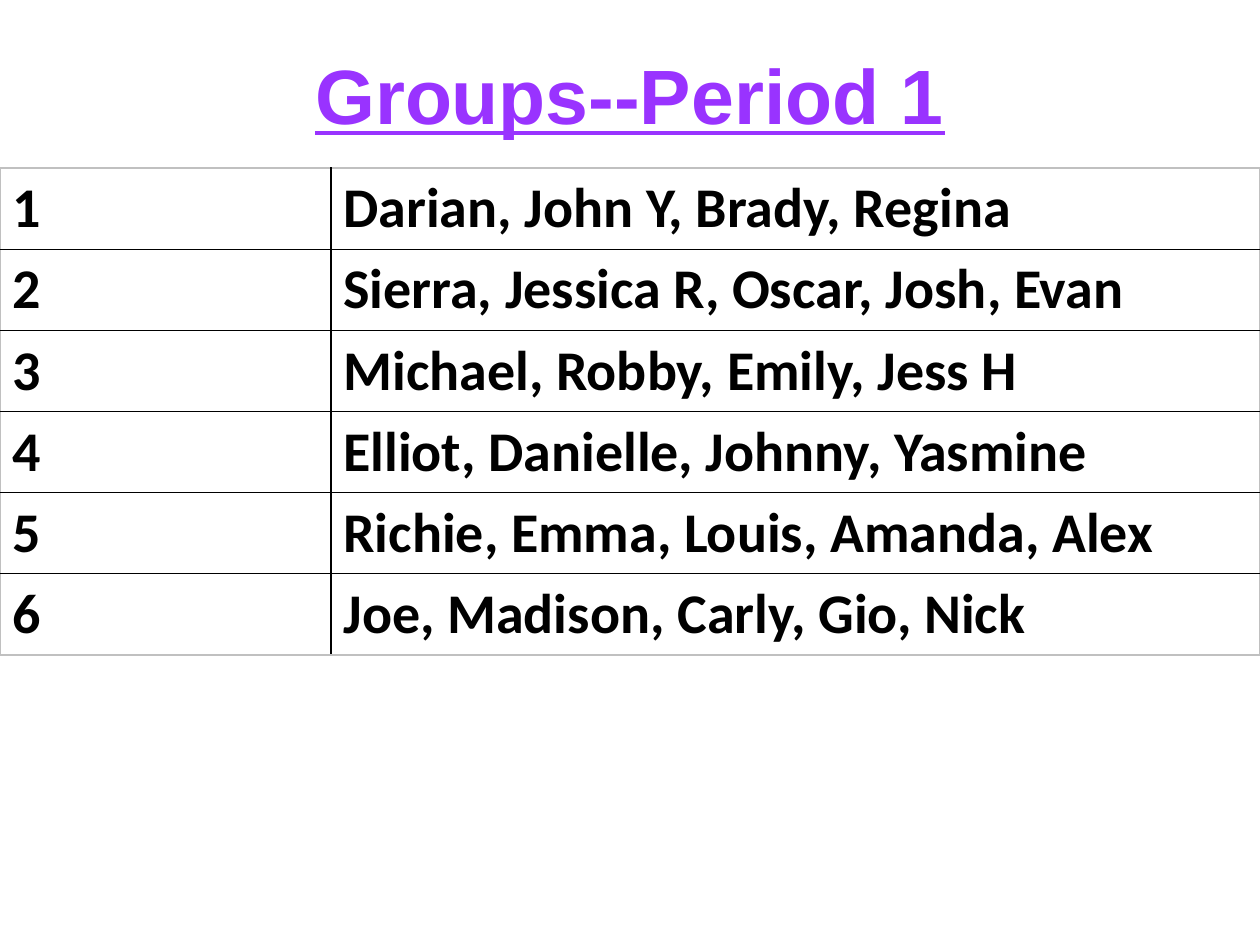
from dataclasses import dataclass

from lxml.etree import SubElement
from pptx import Presentation
from pptx.dml.color import RGBColor
from pptx.enum.text import MSO_ANCHOR, PP_ALIGN
from pptx.oxml.ns import qn
from pptx.util import Cm, Pt


@dataclass(frozen=True)
class Theme:
    title: str = "9933FF"
    text: str = "000000"
    inner: str = "000000"
    outer: str = "C0C0C0"
    head_size: int = 44
    cell_size: int = 32
    head_font: str = "Arial"
    cell_font: str = "Calibri"


THEME = Theme()
WIDTH = 25.4
COLS = (6.67, WIDTH - 6.67)
ROW = 1.61
GROUPS = (
    "Darian, John Y, Brady, Regina",
    "Sierra, Jessica R, Oscar, Josh, Evan",
    "Michael, Robby, Emily, Jess H",
    "Elliot, Danielle, Johnny, Yasmine",
    "Richie, Emma, Louis, Amanda, Alex",
    "Joe, Madison, Carly, Gio, Nick",
)


def add_run(para, text, font, size, color):
    run = para.add_run()
    run.text = text
    run.font.name = font
    run.font.size = Pt(size)
    run.font.bold = True
    run.font.color.rgb = RGBColor.from_string(color)
    return run


def add_title(slide, text):
    title = slide.shapes.title
    title.left, title.top = Cm(0), Cm(0.05)
    title.width, title.height = Cm(WIDTH), Cm(3.68)
    frame = title.text_frame
    frame.vertical_anchor = MSO_ANCHOR.MIDDLE
    para = frame.paragraphs[0]
    para.alignment = PP_ALIGN.CENTER
    run = add_run(para, text, THEME.head_font, THEME.head_size, THEME.title)
    run.font.underline = True


def set_lines(cell, edges):
    """Draw the four borders; edges tells which sides lie on the rim."""
    props = cell._tc.get_or_add_tcPr()
    for side, rim in zip("LRTB", edges):
        line = SubElement(props, qn(f"a:ln{side}"), w=str(Pt(1)))
        fill = SubElement(line, qn("a:solidFill"))
        color = THEME.outer if rim else THEME.inner
        SubElement(fill, qn("a:srgbClr"), val=color)


def add_groups(slide, groups):
    count = len(groups)
    frame = slide.shapes.add_table(
        count, len(COLS), Cm(0), Cm(3.39), Cm(WIDTH), Cm(ROW * count))
    table = frame.table
    table.first_row = table.horz_banding = False
    for col, width in zip(table.columns, COLS):
        col.width = Cm(width)
    for i, names in enumerate(groups):
        table.rows[i].height = Cm(ROW)
        for j, text in enumerate((str(i + 1), names)):
            cell = table.cell(i, j)
            add_run(cell.text_frame.paragraphs[0], text,
                    THEME.cell_font, THEME.cell_size, THEME.text)
            set_lines(cell, (j == 0, j == len(COLS) - 1,
                             i == 0, i == count - 1))
            cell.fill.background()


def main():
    deck = Presentation()
    deck.slide_width, deck.slide_height = Cm(WIDTH), Cm(19.05)
    slide = deck.slides.add_slide(deck.slide_layouts[5])

    # Heading
    add_title(slide, "Groups--Period 1")

    # Numbered groups
    add_groups(slide, GROUPS)

    deck.save("out.pptx")


if __name__ == "__main__":
    main()
